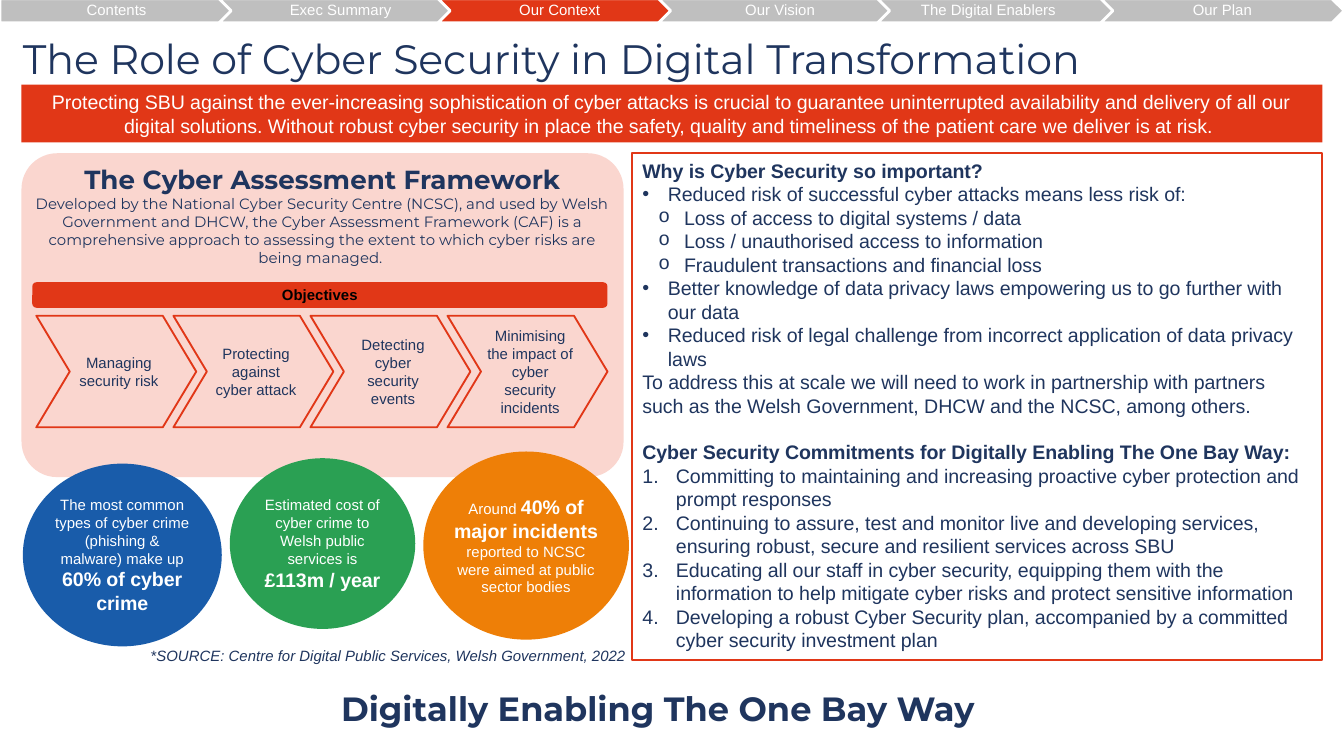
"""Build the cyber security slide."""
from lxml import etree
from pptx import Presentation
from pptx.dml.color import RGBColor
from pptx.enum.shapes import MSO_SHAPE
from pptx.enum.text import MSO_ANCHOR, PP_ALIGN
from pptx.oxml.ns import qn
from pptx.util import Inches, Pt

RECT, ROUND = MSO_SHAPE.RECTANGLE, MSO_SHAPE.ROUNDED_RECTANGLE
OVAL, PLATE, ARROW = MSO_SHAPE.OVAL, MSO_SHAPE.PENTAGON, MSO_SHAPE.CHEVRON
TOP, MIDDLE = MSO_ANCHOR.TOP, MSO_ANCHOR.MIDDLE
LEFT, CENTER = PP_ALIGN.LEFT, PP_ALIGN.CENTER
HEX = {"navy": "1F355E", "red": "E13717", "pink": "FAD6CF", "white": "FFFFFF",
       "black": "000000", "grey": "BFBFBF", "blue": "195CAA",
       "green": "2AA053", "orange": "EE7F07"}
PAD = (0.08, 0.04, 0.08, 0.04)
NONE = (0, 0, 0, 0)


def color(name):
    return RGBColor.from_string(HEX[name])


def mark(para, kind, left, hang):
    props = para._p.get_or_add_pPr()
    props.set("marL", str(Inches(left)))
    props.set("indent", str(-Inches(hang)))
    if kind == "1.":
        etree.SubElement(props, qn("a:buAutoNum"), type="arabicPeriod")
    else:
        face = "Courier New" if kind == "o" else "Arial"
        etree.SubElement(props, qn("a:buFont"), typeface=face)
        etree.SubElement(props, qn("a:buChar"), char=kind)


def write(para, text, size=8, face="Arial", ink="navy", bold=False, italic=False):
    run = para.add_run()
    run.text = text
    font = run.font
    font.size, font.name = Pt(size), face
    font.bold, font.italic = bold, italic
    font.color.rgb = color(ink)


class Deck:
    def __init__(self):
        self.show = Presentation()
        self.show.slide_width = Inches(10)
        self.show.slide_height = Inches(10) * 9 // 16
        self.slide = self.show.slides.add_slide(self.show.slide_layouts[5])

    def frame(self, shape, paras, pad, anchor, align):
        """Fill a shape with paragraphs, each a list of (text, format) runs."""
        frame = shape.text_frame
        frame.word_wrap = True
        frame.vertical_anchor = anchor
        (frame.margin_left, frame.margin_top,
         frame.margin_right, frame.margin_bottom) = map(Inches, pad)
        for i, runs in enumerate(paras):
            para = frame.add_paragraph() if i else frame.paragraphs[0]
            para.alignment = align
            for text, style in runs:
                write(para, text, **style)
        return frame.paragraphs

    def title(self, box, text, **style):
        shape = self.slide.shapes.title
        shape.left, shape.top, shape.width, shape.height = map(Inches, box)
        self.frame(shape, [[(text, style)]], (0.07, 0.04, 0.07, 0.04), MIDDLE, LEFT)

    def text(self, box, text, pad, anchor, align, **style):
        shape = self.slide.shapes.add_textbox(*map(Inches, box))
        self.frame(shape, [[(text, style)]], pad, anchor, align)

    def shape(self, kind, box, paras, fill=None, line=None, width=1, adjust=None,
              pad=NONE, anchor=MIDDLE, align=CENTER):
        shape = self.slide.shapes.add_shape(kind, *map(Inches, box))
        shape.shadow.inherit = False
        if adjust is not None:
            shape.adjustments[0] = adjust
        if fill:
            shape.fill.solid()
            shape.fill.fore_color.rgb = color(fill)
        else:
            shape.fill.background()
        if line:
            shape.line.color.rgb = color(line)
            shape.line.width = Pt(width)
        else:
            shape.line.fill.background()
        return self.frame(shape, paras, pad, anchor, align)


MARKS = {"dot": ("•", 0.19, 0.19), "sub": ("o", 0.31, 0.19), "num": ("1.", 0.25, 0.25)}
REASONS = [
    ("head", "Why is Cyber Security so important?"),
    ("dot", "Reduced risk of successful cyber attacks means less risk of:"),
    ("sub", "Loss of access to digital systems / data"),
    ("sub", "Loss / unauthorised access to information"),
    ("sub", "Fraudulent transactions and financial loss"),
    ("dot", "Better knowledge of data privacy laws empowering us to go further with our data"),
    ("dot", "Reduced risk of legal challenge from incorrect application of data privacy laws"),
    ("plain", "To address this at scale we will need to work in partnership with partners "
              "such as the Welsh Government, DHCW and the NCSC, among others."),
    ("head", "Cyber Security Commitments for Digitally Enabling The One Bay Way:"),
    ("num", "Committing to maintaining and increasing proactive cyber protection and "
            "prompt responses"),
    ("num", "Continuing to assure, test and monitor live and developing services, "
            "ensuring robust, secure and resilient services across SBU"),
    ("num", "Educating all our staff in cyber security, equipping them with the "
            "information to help mitigate cyber risks and protect sensitive information"),
    ("num", "Developing a robust Cyber Security plan, accompanied by a committed "
            "cyber security investment plan"),
]
GOALS = ["Managing security risk", "Protecting against cyber attack",
         "Detecting cyber security events",
         "Minimising the impact of cyber security incidents"]
SMALL = {"ink": "white"}
LARGE = {"ink": "white", "size": 10.5, "bold": True}
FACTS = [
    ((0.17, 3.45, 1.48, 1.36), "blue",
     [("The most common types of cyber crime (phishing & malware) make up ", SMALL),
      ("60% of cyber crime", LARGE)]),
    ((1.71, 3.41, 1.38, 1.27), "green",
     [("Estimated cost of cyber crime to Welsh public services is ", SMALL),
      ("£113m / year", LARGE)]),
    ((3.15, 3.36, 1.53, 1.4), "orange",
     [("Around ", SMALL), ("40% of major incidents ", LARGE),
      ("reported to NCSC were aimed at public sector bodies", SMALL)]),
]
TABS = [("Contents", 0, 1.78, 0.2), ("Exec Summary", 1.63, 1.97, 0.04),
        ("Our Context", 3.26, 1.97, 0.04), ("Our Vision", 4.9, 1.97, 0.04),
        ("The Digital Enablers", 6.53, 1.81, 0.04), ("Our Plan", 8.19, 1.81, 0.2)]


def main():
    deck = Deck()
    deck.title((0.1, -0.01, 9.18, 0.88),
               "The Role of Cyber Security in Digital Transformation",
               size=22, face="Montserrat")
    pitch = ("Protecting SBU against the ever-increasing sophistication of cyber attacks "
             "is crucial to guarantee uninterrupted availability and delivery of all our "
             "digital solutions. Without robust cyber security in place the safety, quality "
             "and timeliness of the patient care we deliver is at risk. ")
    deck.shape(RECT, (0.16, 0.63, 9.68, 0.43),
               [[(pitch, {"size": 10.5, "ink": "white"})]], "red", pad=PAD)

    lines = [[(text, {"size": 10.5, "bold": kind == "head"})] for kind, text in REASONS]
    paras = deck.shape(RECT, (4.7, 1.14, 5.14, 3.77), lines, "white", "red",
                       pad=PAD, anchor=TOP, align=LEFT)
    for i, (para, (kind, _)) in enumerate(zip(paras, REASONS)):
        if kind in MARKS:
            mark(para, *MARKS[kind])
        if kind == "sub":
            para.level = 1
        if kind == "head" and i:
            para.space_before = Pt(12.5)

    about = ("Developed by the National Cyber Security Centre (NCSC), and used by Welsh "
             "Government and DHCW, the Cyber Assessment Framework (CAF) is a comprehensive "
             "approach to assessing the extent to which cyber risks are being managed. ")
    deck.shape(ROUND, (0.16, 1.14, 4.48, 2.41),
               [[("The Cyber Assessment Framework",
                  {"size": 14, "face": "Montserrat", "bold": True})],
                [(about, {"face": "Montserrat"})]],
               "pink", adjust=0.11, anchor=TOP)
    deck.text((1.06, 4.75, 3.69, 0.25),
              "*SOURCE: Centre for Digital Public Services, Welsh Government, 2022",
              (0.06,) * 4, MIDDLE, LEFT, italic=True)
    for box, fill, runs in FACTS:
        deck.shape(OVAL, box, [runs], fill)

    deck.shape(ROUND, (0.24, 2.1, 4.28, 0.19),
               [[("Objectives", {"ink": "black", "bold": True})]], "red")
    for i, goal in enumerate(GOALS):
        deck.shape(ARROW, (0.27 + 1.02 * i, 2.35, 1.19, 0.83), [[(goal, {})]],
                   line="red", adjust=0.3, pad=(0.04, 0, 0, 0))
    deck.text((2.14, 5.07, 5.51, 0.36), "Digitally Enabling The One Bay Way",
              (0.1, 0.05, 0.1, 0.05), TOP, CENTER, size=18, face="Montserrat", bold=True)

    for name, left, width, inset in TABS:
        fill = "red" if name == "Our Context" else "grey"
        para = deck.shape(ARROW if left else PLATE, (left, -0.01, width, 0.18),
                          [[(name, SMALL)]], fill, "white", 1.5,
                          pad=(inset, 0.02, 0.2, 0.02))[0]
        para.line_spacing = 0.9
        para.space_after = Pt(2.8)
    deck.show.save("out.pptx")


if __name__ == "__main__":
    main()
